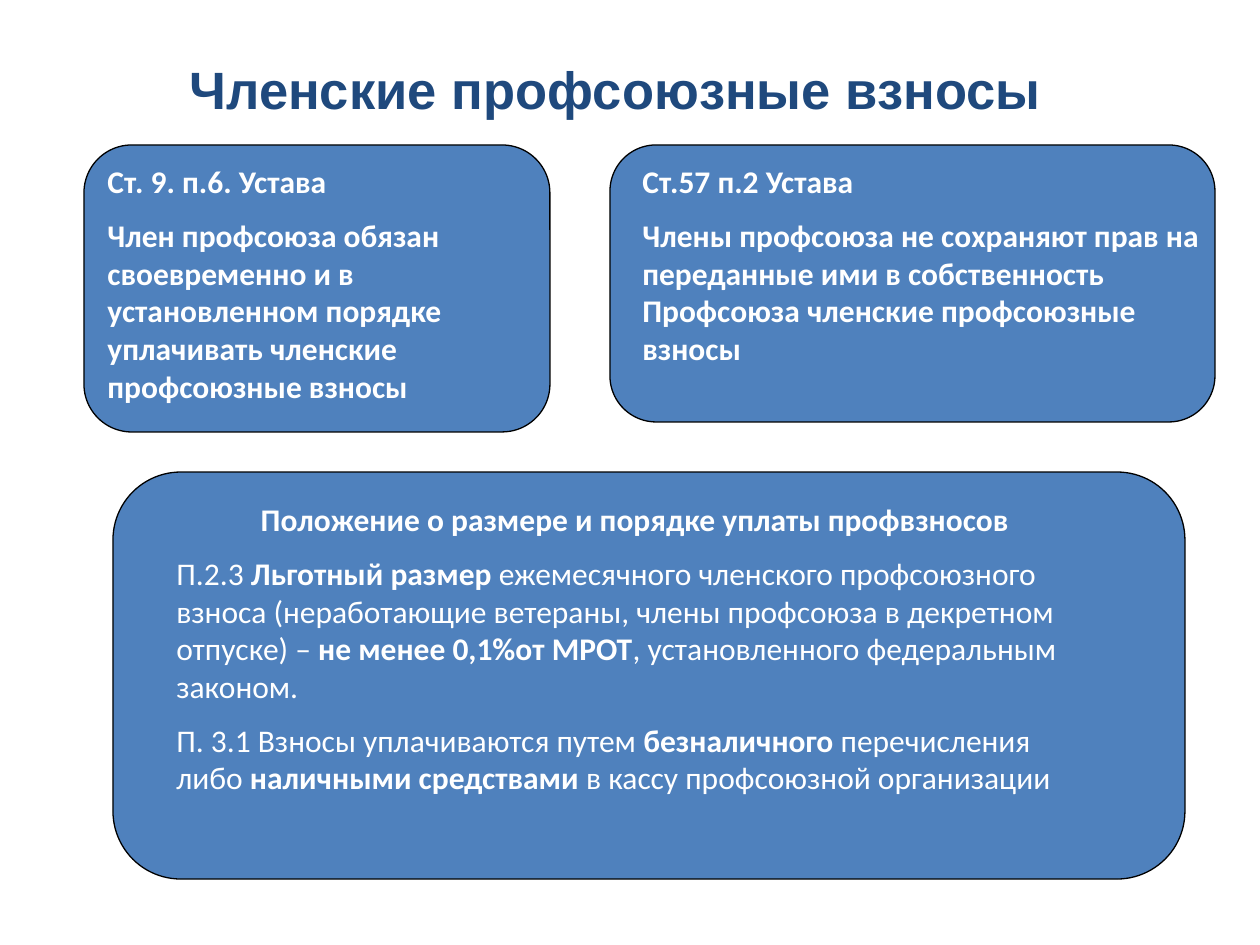
from dataclasses import dataclass

from pptx import Presentation
from pptx import util as u
from pptx.dml.color import RGBColor
from pptx.enum import shapes, text


@dataclass(frozen=True)
class Theme:
    card: str = "4F81BD"
    outline: str = "000000"
    heading: str = "1F497D"
    body: str = "FFFFFF"
    heading_font: str = "Arial"
    body_font: str = "Calibri"
    heading_size: int = 30
    body_size: int = 18
    paragraph_gap: int = 9
    outline_width: float = 0.75


PX = u.Inches(1) / 126
LEFT = text.PP_ALIGN.LEFT
CENTER = text.PP_ALIGN.CENTER


def px(*lengths):
    return [u.Emu(round(n * PX)) for n in lengths]


class Builder:
    def __init__(self, s, theme):
        self.s = s
        self.theme = theme

    def card(self, box):
        t = self.theme
        sp = self.s.shapes.add_shape(
            shapes.MSO_SHAPE.FLOWCHART_ALTERNATE_PROCESS, *px(*box))
        sp.shadow.inherit = False
        sp.fill.solid()
        sp.fill.fore_color.rgb = RGBColor.from_string(t.card)
        sp.line.color.rgb = RGBColor.from_string(t.outline)
        sp.line.width = u.Pt(t.outline_width)

    def frame(self, box, anchor):
        tf = self.s.shapes.add_textbox(*px(*box)).text_frame
        tf.word_wrap = True
        tf.vertical_anchor = anchor
        return tf

    def run(self, p, content, font, size, color, bold):
        r = p.add_run()
        r.text = content
        r.font.name = font
        r.font.size = u.Pt(size)
        r.font.bold = bold
        r.font.color.rgb = RGBColor.from_string(color)

    def title(self, box, content):
        t = self.theme
        p = self.frame(box, text.MSO_ANCHOR.MIDDLE).paragraphs[0]
        p.alignment = CENTER
        self.run(p, content, t.heading_font, t.heading_size, t.heading, True)

    def body(self, box, paragraphs):
        t = self.theme
        tf = self.frame(box, text.MSO_ANCHOR.TOP)
        for i, (align, runs) in enumerate(paragraphs):
            p = tf.add_paragraph() if i else tf.paragraphs[0]
            p.alignment = align
            p.space_before = u.Pt(t.paragraph_gap if i else 0)
            for content, bold in runs:
                self.run(p, content, t.body_font, t.body_size, t.body, bold)


PANELS = [
    ((84, 145, 466, 287), (95, 156, 486, 258), [
        (LEFT, [("Ст. 9. п.6. Устава", True)]),
        (LEFT, [("Член профсоюза обязан своевременно и в установленном "
                 "порядке уплачивать членские профсоюзные взносы", True)]),
    ]),
    ((610, 145, 605, 277), (630, 156, 595, 221), [
        (LEFT, [("Ст.57 п.2 Устава", True)]),
        (LEFT, [("Члены профсоюза не сохраняют прав на переданные ими в "
                 "собственность Профсоюза членские профсоюзные взносы", True)]),
    ]),
    ((113, 472, 1072, 407), (164, 494, 942, 354), [
        (CENTER, [("Положение о размере и порядке уплаты профвзносов", True)]),
        (LEFT, [
            ("П.2.3 ", False),
            ("Льготный размер", True),
            (" ежемесячного членского профсоюзного взноса (неработающие "
             "ветераны, члены профсоюза в декретном отпуске) – ", False),
            ("не менее 0,1%от МРОТ", True),
            (", установленного федеральным законом.", False),
        ]),
        (LEFT, [
            ("П. 3.1 Взносы уплачиваются путем ", False),
            ("безналичного", True),
            (" перечисления либо ", False),
            ("наличными средствами", True),
            (" в кассу профсоюзной организации", False),
        ]),
    ]),
]


def main():
    prs = Presentation()
    prs.slide_width, prs.slide_height = px(1260, 945)
    s = prs.slides.add_slide(prs.slide_layouts[6])
    b = Builder(s, Theme())
    b.title((64, 35, 1103, 107), "Членские профсоюзные взносы")
    for card_box, text_box, paragraphs in PANELS:
        b.card(card_box)
        b.body(text_box, paragraphs)
    prs.save("out.pptx")


if __name__ == "__main__":
    main()
